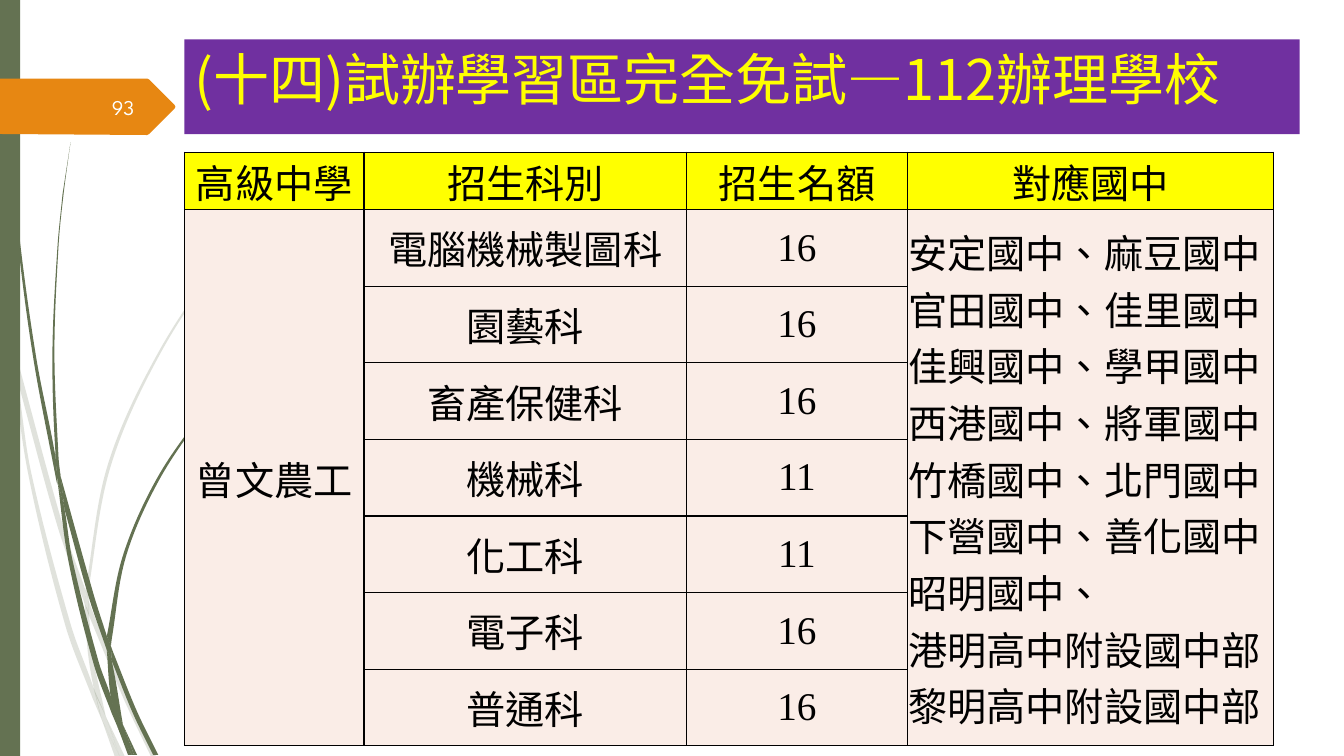
import math

import pptx
import pptx.dml.color
import pptx.enum.shapes
import pptx.enum.text
import pptx.oxml
import pptx.oxml.ns
import pptx.util
from pptx.util import Inches

ALIGN = pptx.enum.text.PP_ALIGN
ANCHOR = pptx.enum.text.MSO_ANCHOR
NS = pptx.oxml.ns.nsdecls("a")
COLORS = {"green": "647252", "orange": "E78712", "purple": "7030A0", "yellow": "FFFF00",
          "blush": "FAEDE7", "black": "000000", "white": "FEFFFF"}
CJK = "Noto Sans CJK SC"
SERIF = "Times New Roman"

# Each grass blade is a pair of edges, followed in turn round its outline
PALE_BLADES = [
    ([(0.11, 3.5), (0.08, 3.22), (0, 2.82)], [(0, 2.99), (0.1, 3.44)]),
    ([(0.14, 3.45), (0.62, 5.2), (0.85, 5.86)], [(0.84, 5.99), (0.57, 5.22), (0.17, 3.76)]),
    ([(0.88, 5.96), (0.92, 6.07), (1.27, 6.92), (1.55, 7.51)],
     [(1.5, 7.51), (1.23, 6.94), (0.88, 6.1)]),
    ([(1.05, 7.11), (1.24, 7.51)], [(1.19, 7.51)]),
    ([(0.11, 3.5), (0.17, 3.76), (0.31, 4.69), (0.7, 6.19), (0.93, 6.83), (1.01, 7.14)],
     [(0.92, 6.93), (0.65, 6.21), (0.28, 4.7), (0.11, 3.5)]),
    ([(0.84, 5.99), (0.88, 6.08), (0.91, 6.46), (1.05, 7.11)],
     [(0.96, 6.92), (0.93, 6.83), (0.87, 6.46), (0.84, 5.99)]),
    ([(0.88, 5.96), (0.88, 5.84), (1.1, 4.62), (1.6, 3.49), (2.29, 2.45), (2.68, 1.98),
      (3.12, 1.53)],
     [(2.68, 1.97), (2.28, 2.44), (1.58, 3.48), (1.07, 4.61), (0.85, 5.84), (0.85, 5.86)]),
    ([(1.01, 7.14), (1.19, 7.51)], [(1.14, 7.51)]),
    ([(0.85, 5.86), (0.88, 5.96), (0.88, 6.1)], [(0.84, 5.99)]),
    ([(0.93, 6.83), (1.05, 7.11), (1.19, 7.51)], [(1.01, 7.14), (0.99, 7.07), (0.93, 6.83)]),
]
DARK_BLADES = [
    ([(0.03, 0), (0.05, 0.48), (0.08, 1.09), (0.19, 2.32), (0.36, 3.55), (0.55, 4.53),
      (0.57, 4.81)],
     [(0.56, 4.77), (0.33, 3.55), (0.17, 2.33), (0.07, 1.1), (0.03, 0.48), (0.03, 0)]),
    ([(0.6, 4.72), (0.93, 5.9), (1.06, 6.31)], [(1.06, 6.45), (0.88, 5.92), (0.64, 5.05)]),
    ([(1.1, 6.41), (1.13, 6.49), (1.36, 7.06), (1.57, 7.49)],
     [(1.52, 7.49), (1.32, 7.08), (1.11, 6.56)]),
    ([(0.57, 4.77), (0.64, 5.05), (0.72, 5.56), (0.98, 6.57), (1.1, 6.91), (1.17, 7.22)],
     [(1.11, 7.08), (0.93, 6.59), (0.68, 5.57), (0.57, 4.77)]),
    ([(0.6, 4.72), (0.58, 4.53), (0.54, 3.49), (0.58, 2.45), (0.63, 1.93), (0.7, 1.41)],
     [(0.62, 1.93), (0.57, 2.45), (0.52, 3.49), (0.55, 4.49), (0.6, 4.72)]),
    ([(1.22, 7.19), (1.36, 7.49)], [(1.33, 7.49)]),
    ([(0.55, 4.49), (0.6, 4.72), (0.64, 5.05)], [(0.57, 4.77), (0.55, 4.53)]),
    ([(1.1, 6.41), (1.11, 6.33), (1.25, 5.52), (1.58, 4.76), (2.05, 4.06), (2.31, 3.74),
      (2.61, 3.44)],
     [(2.31, 3.73), (2.04, 4.05), (1.56, 4.74), (1.22, 5.51), (1.06, 6.31)]),
    ([(1.17, 7.22), (1.31, 7.49)], [(1.27, 7.49)]),
    ([(1.06, 6.45), (1.11, 6.56), (1.22, 7.19)], [(1.16, 7.06), (1.1, 6.92), (1.06, 6.45)]),
    ([(1.06, 6.31), (1.1, 6.41), (1.11, 6.56)], [(1.06, 6.45)]),
    ([(1.1, 6.91), (1.22, 7.19), (1.33, 7.49)], [(1.31, 7.49), (1.17, 7.22), (1.1, 6.91)]),
]
ARROW = [(-0.01, 0.78), (1.46, 0.78), (1.48, 0.79), (1.73, 1.04), (1.74, 1.06), (1.73, 1.08),
         (1.48, 1.33), (1.46, 1.34), (-0.01, 1.33)]

HEADINGS = ["高級中學", "招生科別", "招生名額", "對應國中"]
DEPARTMENTS = [("電腦機械製圖科", 16), ("園藝科", 16), ("畜產保健科", 16), ("機械科", 11),
               ("化工科", 11), ("電子科", 16), ("普通科", 16)]
FEEDERS = ["安定國中、麻豆國中官田國中、佳里國中佳興國中、學甲國中"
           "西港國中、將軍國中竹橋國中、北門國中下營國中、善化國中",
           "昭明國中、", "港明高中附設國中部黎明高中附設國中部"]


def rgb(name):
    return pptx.dml.color.RGBColor.from_string(COLORS[name])


def paint(shape, color, alpha=None):
    shape.shadow.inherit = False
    shape.fill.solid()
    shape.fill.fore_color.rgb = rgb(color)
    shape.line.fill.background()
    if alpha:
        tint = shape.fill._xPr.find(".//" + pptx.oxml.ns.qn("a:srgbClr"))
        tint.append(pptx.oxml.parse_xml(f'<a:alpha {NS} val="{alpha * 1000}"/>'))


def add_outline(page, points, color, alpha=None):
    corners = [(Inches(x), Inches(y)) for x, y in points]
    builder = page.shapes.build_freeform(*corners[0])
    builder.add_line_segments(corners[1:], close=True)
    shape = builder.convert_to_shape()
    paint(shape, color, alpha)
    return shape


def handle(point, before, after, length):
    """Control point at a third of a length along the line from before to after."""
    reach = length / 3 / (math.dist(before, after) or 1)
    return tuple(round(p + (a - b) * reach) for p, b, a in zip(point, before, after))


def add_blade(page, out, back, alpha):
    shape = add_outline(page, out + back, "green", alpha)
    lines = list(shape._element.iter(pptx.oxml.ns.qn("a:lnTo")))
    corners = [(Inches(x) - shape.left, Inches(y) - shape.top) for x, y in out + back]
    for edge, first in ((corners[:len(out)], 0), (corners[len(out):], len(out))):
        ends = [edge[0], *edge, edge[-1]]
        for index, (a, b, c, d) in enumerate(zip(ends, ends[1:], ends[2:], ends[3:]), first):
            length = math.dist(b, c)
            curve = [handle(b, a, c, length), handle(c, d, b, length), c]
            marks = "".join(f'<a:pt x="{x}" y="{y}"/>' for x, y in curve)
            line = lines[index]
            line.getparent().replace(line, pptx.oxml.parse_xml(
                f'<a:cubicBezTo {NS}>{marks}</a:cubicBezTo>'))


def add_bar(page, left, top, width, height, color):
    bar = page.shapes.add_shape(pptx.enum.shapes.MSO_SHAPE.RECTANGLE, Inches(left),
                                Inches(top), Inches(width), Inches(height))
    paint(bar, color)
    return bar


def write(frame, lines, size, font, color, align):
    for index, line in enumerate(lines):
        para = frame.paragraphs[0] if index == 0 else frame.add_paragraph()
        para.alignment = align
        span = para.add_run()
        span.text = line
        formats = {"size": pptx.util.Pt(size), "name": font}
        for key, value in formats.items():
            setattr(span.font, key, value)
        span.font.color.rgb = rgb(color)
        properties = span._r.get_or_add_rPr()
        properties.set("lang", "zh-TW")
        properties.append(pptx.oxml.parse_xml(f'<a:ea {NS} typeface="{CJK}"/>'))


def add_borders(cell):
    properties = cell._tc.get_or_add_tcPr()
    for index, side in enumerate("LRTB"):
        properties.insert(index, pptx.oxml.parse_xml(
            f'<a:ln{side} {NS} w="12700"><a:solidFill>'
            f'<a:srgbClr val="{COLORS["black"]}"/></a:solidFill></a:ln{side}>'))


def fill_cell(cell, lines, font=CJK, align=ALIGN.CENTER):
    side, top = (0.02, 0) if font == SERIF else (0.01, 0.01)
    formats = {"margin_left": Inches(side), "margin_right": Inches(side),
               "margin_top": Inches(top), "margin_bottom": 0,
               "vertical_anchor": ANCHOR.MIDDLE}
    for key, value in formats.items():
        setattr(cell, key, value)
    write(cell.text_frame, lines, 28, font, "black", align)


def add_quota_table(page):
    table = page.shapes.add_table(len(DEPARTMENTS) + 1, len(HEADINGS), Inches(1.83),
                                  Inches(1.51), Inches(10.81), Inches(5.81)).table
    for column, width in zip(table.columns, [1.78, 3.2, 2.19, 3.63]):
        column.width = Inches(width)
    for index, row in enumerate(table.rows):
        row.height = Inches(0.76 if index else 0.57)
        for cell in row.cells:
            cell.fill.solid()
            cell.fill.fore_color.rgb = rgb("blush" if index else "yellow")
            add_borders(cell)
    for index, heading in enumerate(HEADINGS):
        fill_cell(table.cell(0, index), [heading])
    for index, (department, places) in enumerate(DEPARTMENTS, 1):
        fill_cell(table.cell(index, 1), [department], SERIF)
        fill_cell(table.cell(index, 2), [str(places)], SERIF)
    for column in (0, 3):
        table.cell(1, column).merge(table.cell(len(DEPARTMENTS), column))
    fill_cell(table.cell(1, 0), ["曾文農工"])
    fill_cell(table.cell(1, 3), FEEDERS, align=ALIGN.LEFT)


def main():
    deck = pptx.Presentation()
    deck.slide_width, deck.slide_height = Inches(13.33), Inches(7.5)
    page = deck.slides.add_slide(deck.slide_layouts[6])

    # Grass and side bar
    for blades, alpha in ((PALE_BLADES, 20), (DARK_BLADES, None)):
        for out, back in blades:
            add_blade(page, out, back, alpha)
    add_bar(page, 0, 0, 0.2, 7.5, "green")

    # Page number on its arrow
    add_outline(page, ARROW, "orange")
    number = page.shapes.add_textbox(Inches(0.58), Inches(0.86), Inches(0.85), Inches(0.4))
    number.text_frame.word_wrap = True
    number.text_frame.vertical_anchor = ANCHOR.MIDDLE
    write(number.text_frame, ["93"], 15, "League Spartan", "white", ALIGN.RIGHT)

    # Table and title
    add_quota_table(page)
    title = add_bar(page, 1.83, 0.39, 11.06, 0.94, "purple")
    title.text_frame.word_wrap = True
    title.text_frame.vertical_anchor = ANCHOR.TOP
    write(title.text_frame, ["(十四)試辦學習區完全免試—112辦理學校"], 40, CJK, "yellow", ALIGN.LEFT)

    deck.save("out.pptx")


if __name__ == "__main__":
    main()
